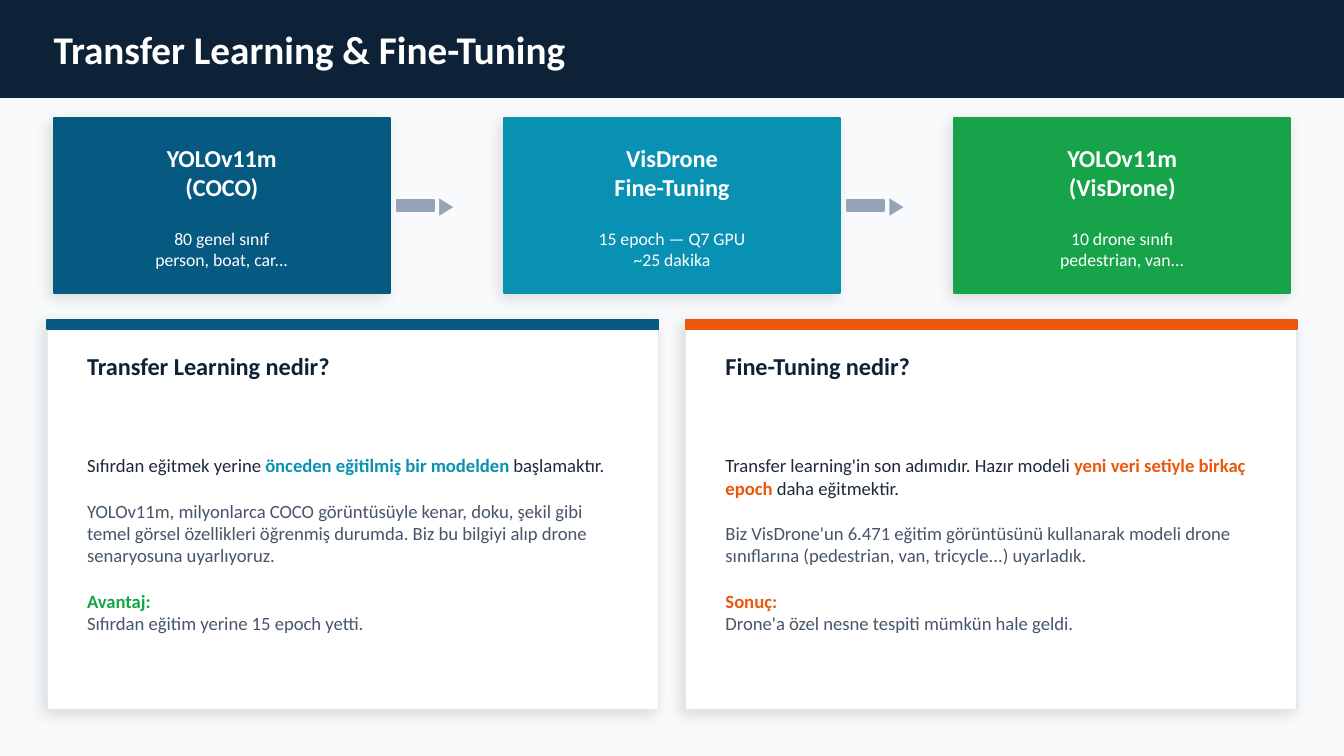
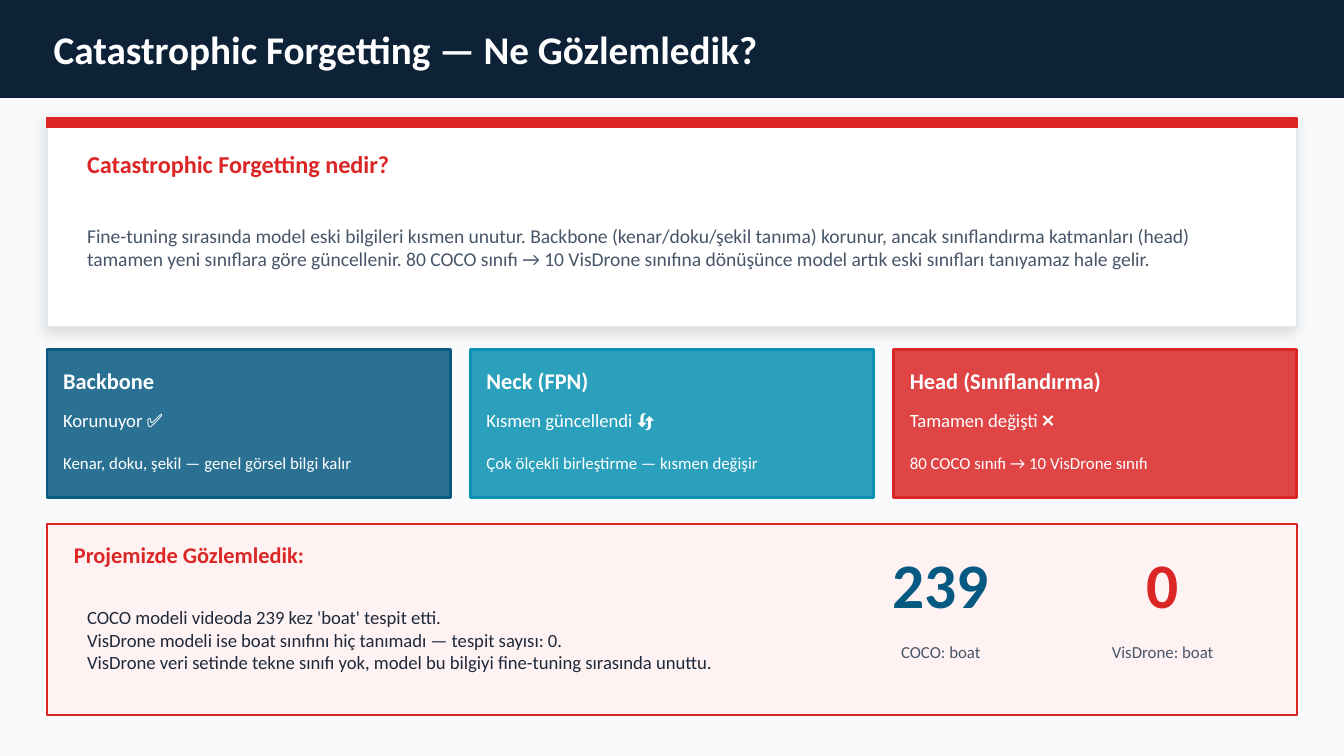
from dataclasses import dataclass
from typing import NamedTuple, Optional

from lxml import etree
from pptx import Presentation
from pptx.dml.color import RGBColor
from pptx.enum.shapes import MSO_SHAPE as SHAPE
from pptx.enum.text import MSO_ANCHOR as ANCHOR, PP_ALIGN as ALIGN
from pptx.oxml.ns import qn
from pptx.util import Inches, Pt

FONT = "Calibri"
NAVY, PAPER, WHITE, BORDER = "0D2137", "F8FAFC", "FFFFFF", "E2E8F0"
BLUE, TEAL, GREEN = "065A82", "0891B2", "16A34A"
ORANGE, RED, BLUSH = "EA580C", "DC2626", "FEF2F2"
INK, SLATE, GREY = "1E293B", "475569", "94A3B8"
LEFT, WIDTH = 0.35, 9.3


class Box(NamedTuple):
    """Position and size in inches."""
    x: float
    y: float
    w: float
    h: float


class Run(NamedTuple):
    """A stretch of text in one format."""
    text: str
    size: float
    color: str
    bold: bool = False


class Para(NamedTuple):
    """A paragraph with its runs and the space above it in points."""
    runs: list[Run]
    before: float = 0


@dataclass
class Step:
    """A coloured box of the training flow."""
    color: str
    title: list[str]
    details: list[str]


@dataclass
class Panel:
    """A white card with an accent band, a title and a body."""
    box: Box
    accent: str
    title: str
    title_color: str
    text_w: float
    body_top: float
    body_h: float
    body: list[Para]


@dataclass
class Layer:
    """A part of the network and what became of it."""
    color: str
    name: str
    status: str
    detail: str


@dataclass
class Count:
    """A large figure with its caption."""
    value: str
    caption: str
    color: str


def rgb(color: str) -> RGBColor:
    """Turn a hex string into a colour."""
    return RGBColor.from_string(color)


def lines(texts: list[str], size: float, color: str, bold: bool = False) -> list[Para]:
    """Make one paragraph of each text in a shared format."""
    return [Para([Run(t, size, color, bold)]) for t in texts]


def add_shadow(sp) -> None:
    """Give a shape the soft card shadow."""
    effects = sp._element.spPr.find(qn("a:effectLst"))
    shadow = etree.SubElement(effects, qn("a:outerShdw"), blurRad=str(Pt(8)),
                              dist=str(Pt(3)), dir=str(135 * 60000),
                              algn="bl", rotWithShape="0")
    tone = etree.SubElement(shadow, qn("a:srgbClr"), val="000000")
    etree.SubElement(tone, qn("a:alpha"), val="12000")


def add_rect(s, box: Box, fill: str, line: Optional[str] = None, width: float = 1,
             shadow: bool = False, opacity: int = 100) -> None:
    """Draw a rectangle outlined in its fill colour unless told otherwise."""
    sp = s.shapes.add_shape(SHAPE.RECTANGLE, *map(Inches, box))
    sp.shadow.inherit = False
    sp.fill.solid()
    sp.fill.fore_color.rgb = rgb(fill)
    sp.line.color.rgb = rgb(line or fill)
    sp.line.width = Pt(width)
    if shadow:
        add_shadow(sp)
    if opacity < 100:
        tone = sp._element.spPr.find(qn("a:solidFill")).find(qn("a:srgbClr"))
        etree.SubElement(tone, qn("a:alpha"), val=str(opacity * 1000))


def add_text(s, box: Box, paras: list[Para], inset: bool = False,
             align: ALIGN = ALIGN.LEFT) -> None:
    """Draw a vertically centred text box."""
    tf = s.shapes.add_textbox(*map(Inches, box)).text_frame
    frame = {"word_wrap": True, "vertical_anchor": ANCHOR.MIDDLE}
    if not inset:
        frame |= {f"margin_{side}": 0 for side in ("left", "right", "top", "bottom")}
    for key, value in frame.items():
        setattr(tf, key, value)
    for i, para in enumerate(paras):
        p = tf.add_paragraph() if i else tf.paragraphs[0]
        p.alignment = align
        if para.before:
            p.space_before = Pt(para.before)
        for run in para.runs:
            r = p.add_run()
            r.text = run.text
            for key, value in {"name": FONT, "size": Pt(run.size), "bold": run.bold}.items():
                setattr(r.font, key, value)
            r.font.color.rgb = rgb(run.color)


def add_slide(prs, title: str):
    """Add a slide with the shared background and title band."""
    s = prs.slides.add_slide(prs.slide_layouts[6])
    s.background.fill.solid()
    s.background.fill.fore_color.rgb = rgb(PAPER)
    add_rect(s, Box(0, 0, 10, 0.72), NAVY)
    add_text(s, Box(0.4, 0, 9.2, 0.72), lines([title], 21, WHITE, True))
    return s


def add_panel(s, panel: Panel) -> None:
    """Draw a card with its band, title and body."""
    x, y, w, _ = panel.box
    add_rect(s, panel.box, WHITE, BORDER, shadow=True)
    add_rect(s, Box(x, y, w, 0.07), panel.accent)
    add_text(s, Box(x + 0.2, y + 0.16, panel.text_w, 0.36),
             lines([panel.title], 13, panel.title_color, True), inset=True)
    add_text(s, Box(x + 0.2, y + panel.body_top, panel.text_w, panel.body_h),
             panel.body, inset=True)


def add_step(s, x: float, step: Step) -> None:
    """Draw one box of the training flow."""
    add_rect(s, Box(x, 0.88, 2.5, 1.3), step.color, shadow=True)
    add_text(s, Box(x, 0.98, 2.5, 0.6), lines(step.title, 13, WHITE, True), align=ALIGN.CENTER)
    add_text(s, Box(x, 1.6, 2.5, 0.5), lines(step.details, 9.5, WHITE), align=ALIGN.CENTER)


def add_arrow(s, x: float) -> None:
    """Draw the arrow that follows a step."""
    add_rect(s, Box(x, 1.49, 0.28, 0.08), GREY)
    add_text(s, Box(x + 0.21, 1.35, 0.2, 0.35), lines(["▶"], 13, GREY), inset=True)


def add_layer(s, x: float, layer: Layer) -> None:
    """Draw one network part."""
    add_rect(s, Box(x, 2.6, 3, 1.1), layer.color, width=1.5, opacity=85)
    rows = [(layer.name, 2.68, 0.3, 12, True),
            (layer.status, 3, 0.25, 10, False),
            (layer.detail, 3.28, 0.32, 9, False)]
    for text, y, h, size, bold in rows:
        add_text(s, Box(x + 0.12, y, 2.76, h), lines([text], size, WHITE, bold))


def add_count(s, x: float, count: Count) -> None:
    """Draw a large figure above its caption."""
    add_text(s, Box(x, 3.98, 1.4, 0.72), lines([count.value], 34, count.color, True),
             align=ALIGN.CENTER)
    add_text(s, Box(x, 4.7, 1.4, 0.3), lines([count.caption], 9, SLATE), align=ALIGN.CENTER)


def explain(lead: str, key: str, key_color: str, tail: str, detail: str,
            label: str, label_color: str, result: str) -> list[Para]:
    """Compose a definition, its detail and a labelled result."""
    return [Para([Run(lead, 10, INK), Run(key, 10, key_color, True), Run(tail, 10, INK)]),
            Para([Run(detail, 10, SLATE)], 12.2),
            Para([Run(label, 10, label_color, True)], 12.2),
            Para([Run(result, 10, SLATE)])]


STEPS = [
    Step(BLUE, ["YOLOv11m", "(COCO)"], ["80 genel sınıf", "person, boat, car..."]),
    Step(TEAL, ["VisDrone", "Fine-Tuning"], ["15 epoch — Q7 GPU", "~25 dakika"]),
    Step(GREEN, ["YOLOv11m", "(VisDrone)"], ["10 drone sınıfı", "pedestrian, van..."]),
]
DEFINITIONS = [
    (BLUE, "Transfer Learning nedir?", explain(
        "Sıfırdan eğitmek yerine ", "önceden eğitilmiş bir modelden ", TEAL, "başlamaktır.",
        "YOLOv11m, milyonlarca COCO görüntüsüyle kenar, doku, şekil gibi temel görsel "
        "özellikleri öğrenmiş durumda. Biz bu bilgiyi alıp drone senaryosuna uyarlıyoruz.",
        "Avantaj:", GREEN, "Sıfırdan eğitim yerine 15 epoch yetti.")),
    (ORANGE, "Fine-Tuning nedir?", explain(
        "Transfer learning'in son adımıdır. Hazır modeli ", "yeni veri setiyle birkaç epoch ",
        ORANGE, "daha eğitmektir.",
        "Biz VisDrone'un 6.471 eğitim görüntüsünü kullanarak modeli drone sınıflarına "
        "(pedestrian, van, tricycle...) uyarladık.",
        "Sonuç:", ORANGE, "Drone'a özel nesne tespiti mümkün hale geldi.")),
]
FORGETTING = (
    "Fine-tuning sırasında model eski bilgileri kısmen unutur. Backbone (kenar/doku/şekil "
    "tanıma) korunur, ancak sınıflandırma katmanları (head) tamamen yeni sınıflara göre "
    "güncellenir. 80 COCO sınıfı → 10 VisDrone sınıfına dönüşünce model artık eski sınıfları "
    "tanıyamaz hale gelir.")
LAYERS = [
    Layer(BLUE, "Backbone", "Korunuyor ✅", "Kenar, doku, şekil — genel görsel bilgi kalır"),
    Layer(TEAL, "Neck (FPN)", "Kısmen güncellendi 🔄", "Çok ölçekli birleştirme — kısmen değişir"),
    Layer(RED, "Head (Sınıflandırma)", "Tamamen değişti ❌", "80 COCO sınıfı → 10 VisDrone sınıfı"),
]
FINDINGS = [
    "COCO modeli videoda 239 kez 'boat' tespit etti.",
    "VisDrone modeli ise boat sınıfını hiç tanımadı — tespit sayısı: 0.",
    "VisDrone veri setinde tekne sınıfı yok, model bu bilgiyi fine-tuning sırasında unuttu.",
]
COUNTS = [Count("239", "COCO: boat", BLUE), Count("0", "VisDrone: boat", RED)]


def build_transfer(prs) -> None:
    """Build the slide on transfer learning and fine-tuning."""
    s = add_slide(prs, "Transfer Learning & Fine-Tuning")
    for i, step in enumerate(STEPS):
        x = 0.4 + 3.35 * i
        add_step(s, x, step)
        if i < len(STEPS) - 1:
            add_arrow(s, x + 2.55)
    for i, (accent, title, body) in enumerate(DEFINITIONS):
        box = Box(LEFT + 4.75 * i, 2.38, 4.55, 2.9)
        add_panel(s, Panel(box, accent, title, NAVY, 4.1, 0.62, 2.1, body))


def build_forgetting(prs) -> None:
    """Build the slide on catastrophic forgetting."""
    s = add_slide(prs, "Catastrophic Forgetting — Ne Gözlemledik?")
    add_panel(s, Panel(Box(LEFT, 0.88, WIDTH, 1.55), RED, "Catastrophic Forgetting nedir?",
                       RED, 8.9, 0.57, 0.78, lines([FORGETTING], 10.5, SLATE)))
    for i, layer in enumerate(LAYERS):
        add_layer(s, LEFT + 3.15 * i, layer)
    add_rect(s, Box(LEFT, 3.9, WIDTH, 1.42), BLUSH, RED)
    add_text(s, Box(0.55, 3.98, 4, 0.3), lines(["Projemizde Gözlemledik:"], 12, RED, True))
    add_text(s, Box(0.55, 4.3, 5.5, 0.92), lines(FINDINGS, 10, INK), inset=True)
    for i, count in enumerate(COUNTS):
        add_count(s, 6.3 + 1.65 * i, count)


def main() -> None:
    """Build and save the presentation."""
    prs = Presentation()
    prs.slide_width = Inches(10)
    prs.slide_height = prs.slide_width * 9 // 16
    build_transfer(prs)
    build_forgetting(prs)
    prs.save("out.pptx")


if __name__ == "__main__":
    main()
